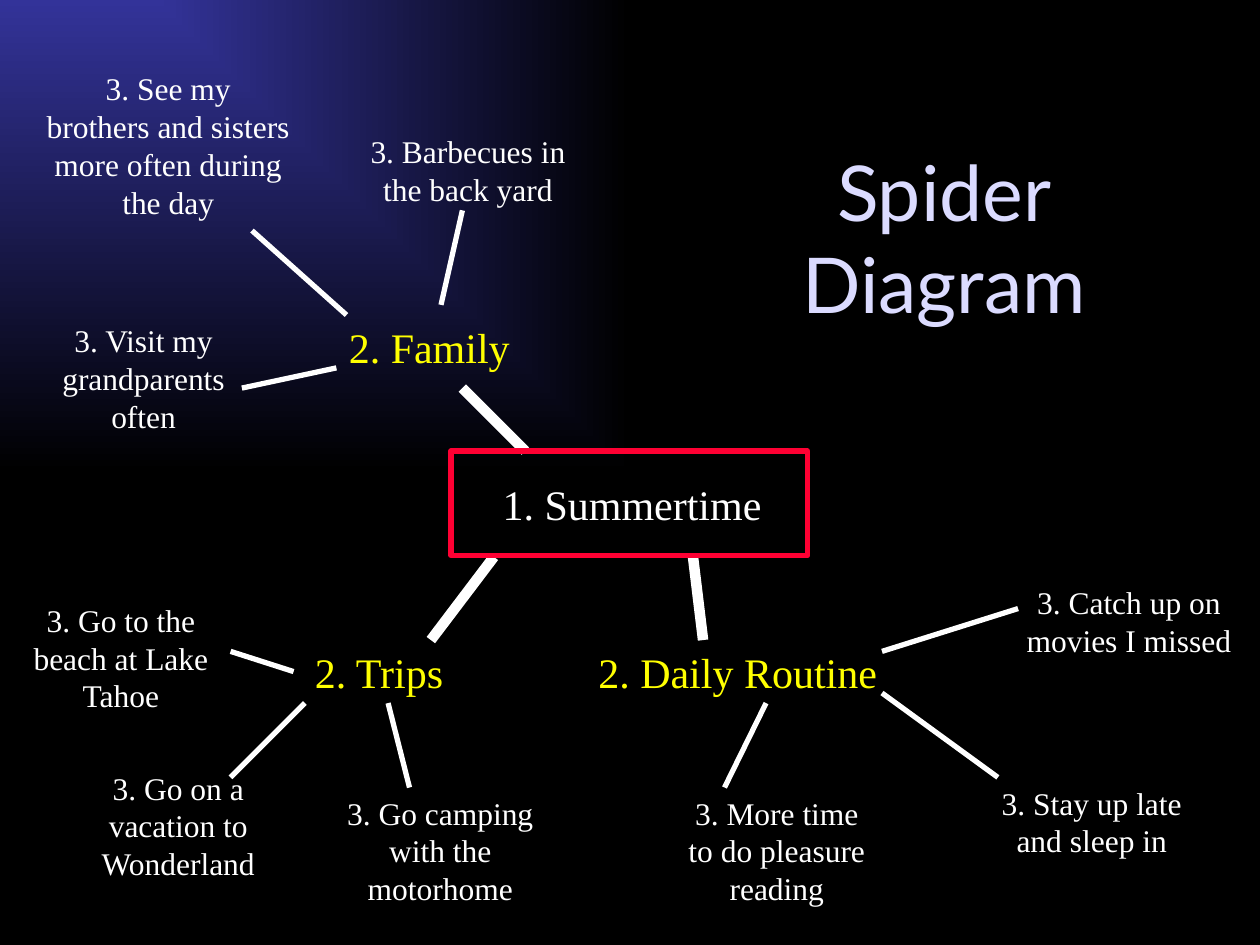
from lxml import etree
from pptx import Presentation
from pptx.dml.color import RGBColor
from pptx.enum.shapes import MSO_CONNECTOR, MSO_SHAPE
from pptx.enum.text import MSO_ANCHOR, PP_ALIGN
from pptx.oxml import parse_xml
from pptx.oxml.ns import nsdecls, qn
from pptx.util import Inches, Pt

STRAIGHT = MSO_CONNECTOR.STRAIGHT
RECTANGLE = MSO_SHAPE.RECTANGLE
CENTER, LEFT = PP_ALIGN.CENTER, PP_ALIGN.LEFT
MIDDLE, TOP = MSO_ANCHOR.MIDDLE, MSO_ANCHOR.TOP

WHITE, YELLOW, RED, LAVENDER = "FFFFFF", "FFFF00", "FF0033", "DBDBFF"
BLUE, BLACK = "333399", "000000"
SERIF, SANS = "Times New Roman", "Lato"
THICK, THIN = 6, 3

# Boxes are (left, top, width, height); lines are (x1, y1, x2, y2), in inches.
TITLE = ("Spider\vDiagram", (5.33, 0.92, 4.33, 1.92))
CENTER_TOPIC = ("1. Summertime", (3.89, 3.75, 2.42, 0.5))
CENTER_FRAME = (3.58, 3.58, 2.83, 0.83)

BRANCHES = [
    {
        "topic": ("2. Family", (2.67, 2.5, 1.8, 0.5)),
        "trunk": (4.17, 3.58, 3.67, 3.08),
        "details": [
            ("3. See my\nbrothers and sisters more often during\nthe day",
             (0.25, 0.5, 2.17, 1.3), (2.75, 2.5, 2, 1.83)),
            ("3. Visit my grandparents often",
             (0.17, 2.5, 1.94, 1), (2.67, 2.92, 1.92, 3.08)),
            ("3. Barbecues in the back yard",
             (2.8, 1, 1.83, 0.7), (3.5, 2.42, 3.67, 1.67)),
        ],
    },
    {
        "topic": ("2. Daily Routine", (4.65, 5.08, 2.51, 0.5)),
        "trunk": (5.5, 4.42, 5.58, 5.08),
        "details": [
            ("3. More time\nto do pleasure reading",
             (5.17, 6.25, 1.99, 1), (6.08, 5.58, 5.75, 6.25)),
            ("3. Stay up late and sleep in",
             (7.75, 6.17, 1.83, 0.7), (7, 5.5, 7.92, 6.17)),
            ("3. Catch up on movies I missed",
             (7.92, 4.58, 2.08, 0.7), (7, 5.17, 8.08, 4.83)),
        ],
    },
    {
        "topic": ("2. Trips", (2.4, 5.08, 1.6, 0.5)),
        "trunk": (3.92, 4.42, 3.42, 5.08),
        "details": [
            ("3. Go on a vacation to Wonderland",
             (0.42, 6.05, 1.99, 1.45), (2.42, 5.58, 1.83, 6.17)),
            ("3. Go camping with the motorhome",
             (2.58, 6.25, 1.83, 1), (3.08, 5.58, 3.25, 6.25)),
            ("3. Go to the beach at Lake Tahoe",
             (0.09, 4.72, 1.74, 1), (1.83, 5.17, 2.33, 5.33)),
        ],
    },
]


def color(hex_value):
    return RGBColor.from_string(hex_value)


def inches(values):
    return [Inches(value) for value in values]


def set_corner_gradient(slide, start, end):
    """Fade the background from the top left corner outwards."""
    fill = slide.background.fill
    fill.gradient()
    for stop, position, hex_value in zip(fill.gradient_stops, (0, 1), (start, end)):
        stop.position = position
        stop.color.rgb = color(hex_value)
    linear = next(slide.element.iter(qn("a:lin")))
    linear.getparent().replace(linear, parse_xml(
        f'<a:path {nsdecls("a")} path="rect">'
        '<a:fillToRect r="100000" b="100000"/></a:path>'))


def add_text(slide, text, box, size, hex_value, font=SERIF, align=CENTER, anchor=TOP):
    frame = slide.shapes.add_textbox(*inches(box)).text_frame
    frame.word_wrap = True
    frame.vertical_anchor = anchor
    frame.text = text
    for paragraph in frame.paragraphs:
        paragraph.alignment = align
        for run in paragraph.runs:
            run.font.name = font
            run.font.size = Pt(size)
            run.font.color.rgb = color(hex_value)


def add_line(slide, ends, width):
    line = slide.shapes.add_connector(STRAIGHT, *inches(ends))
    line.line.color.rgb = color(WHITE)
    line.line.width = Pt(width)
    etree.SubElement(line.element.spPr, qn("a:effectLst"))


def add_frame(slide, box):
    frame = slide.shapes.add_shape(RECTANGLE, *inches(box))
    frame.shadow.inherit = False
    frame.fill.background()
    frame.line.color.rgb = color(RED)
    frame.line.width = Pt(THIN)


def main():
    presentation = Presentation()
    presentation.slide_width, presentation.slide_height = inches((10, 7.5))
    slide = presentation.slides.add_slide(presentation.slide_layouts[6])
    set_corner_gradient(slide, BLUE, BLACK)

    add_text(slide, *TITLE, 44, LAVENDER, font=SANS, anchor=MIDDLE)
    add_text(slide, *CENTER_TOPIC, 24, WHITE, align=LEFT)
    for branch in BRANCHES:
        add_text(slide, *branch["topic"], 24, YELLOW, align=LEFT)
        add_line(slide, branch["trunk"], THICK)
        for text, box, ends in branch["details"]:
            add_text(slide, text, box, 18, WHITE)
            add_line(slide, ends, THIN)
    add_frame(slide, CENTER_FRAME)

    presentation.save("out.pptx")


if __name__ == "__main__":
    main()
